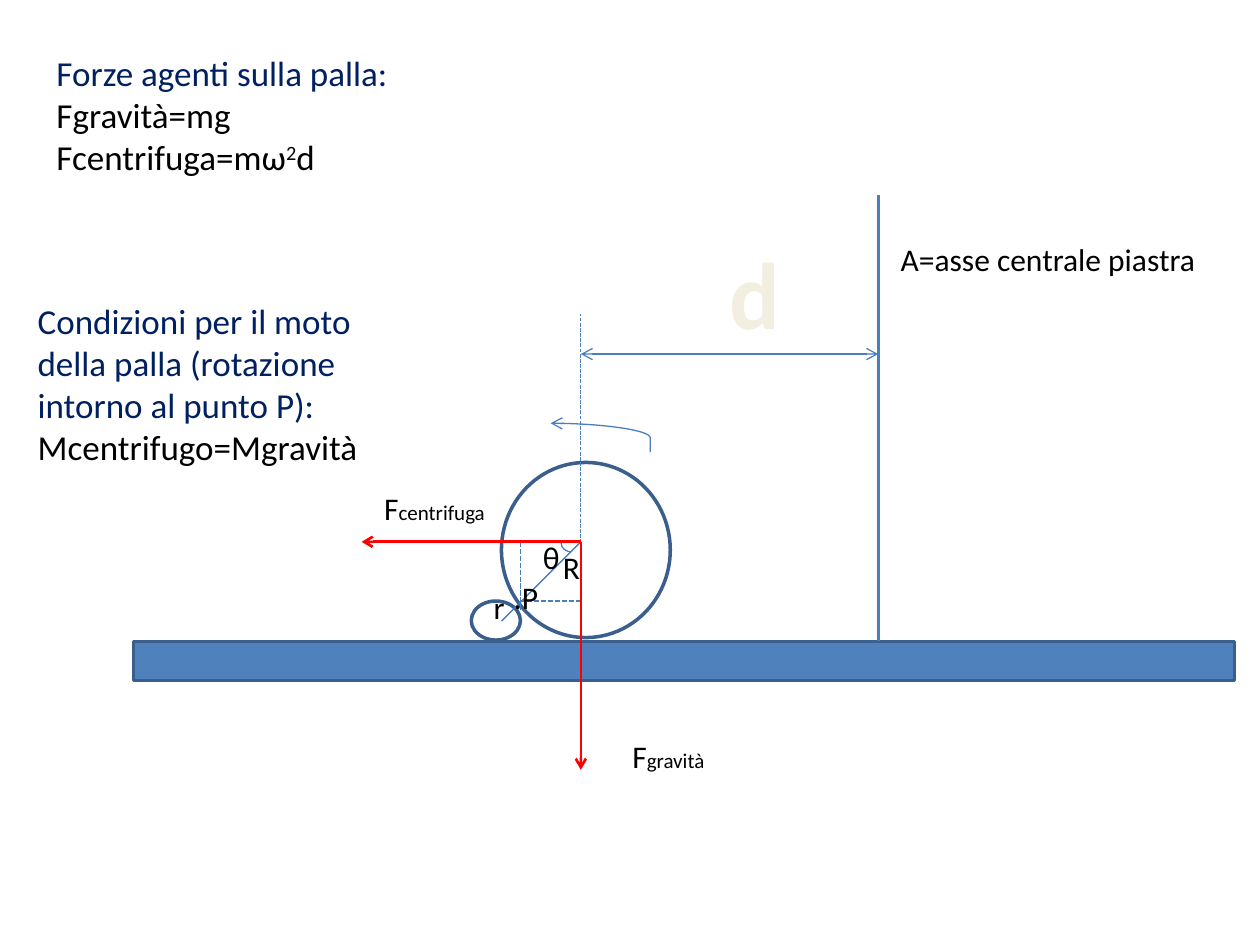
from lxml import etree
from pptx import Presentation
from pptx.dml.color import RGBColor
from pptx.enum.dml import MSO_LINE
from pptx.enum.shapes import MSO_CONNECTOR as LINK, MSO_SHAPE as SHAPE
from pptx.enum.text import MSO_AUTO_SIZE as AUTOSIZE
from pptx.oxml.ns import qn
from pptx.util import Inches, Pt

BLUE = RGBColor(0x4F, 0x81, 0xBD)
OUTLINE = RGBColor(0x3A, 0x5F, 0x8C)
LINE_BLUE = RGBColor(0x4B, 0x7E, 0xBC)
RED = RGBColor(0xFF, 0x00, 0x00)
NAVY = RGBColor(0x00, 0x20, 0x60)
BLACK = RGBColor(0x00, 0x00, 0x00)
CREAM = RGBColor(0xF2, 0xEE, 0xE0)


def add_text(slide, box, paragraphs, size=18, color=BLACK, bold=False, wrap=True):
    """Add a text box; each paragraph is a list of (text, overrides) runs."""
    frame = slide.shapes.add_textbox(*map(Inches, box)).text_frame
    frame.word_wrap = wrap
    frame.auto_size = AUTOSIZE.SHAPE_TO_FIT_TEXT
    for index, runs in enumerate(paragraphs):
        paragraph = frame.add_paragraph() if index else frame.paragraphs[0]
        for text, style in runs:
            run = paragraph.add_run()
            run.text = text
            run.font.name = "Calibri"
            run.font.size = Pt(style.get("size", size))
            run.font.bold = bold
            run.font.color.rgb = style.get("color", color)
            if "baseline" in style:
                run.font._element.set("baseline", str(style["baseline"]))


def add_outline(slide, kind, box, fill=None, color=OUTLINE, width=2):
    """Add a preset shape with an outline and an optional fill."""
    shape = slide.shapes.add_shape(kind, *map(Inches, box))
    shape.shadow.inherit = False
    if fill is None:
        shape.fill.background()
    else:
        shape.fill.solid()
        shape.fill.fore_color.rgb = fill
    shape.line.color.rgb = color
    shape.line.width = Pt(width)
    return shape


def add_line(slide, start, end, color=LINE_BLUE, width=0.75, dashed=False,
             arrows=(), kind=LINK.STRAIGHT):
    """Add a connector; arrows names the ends (headEnd, tailEnd) with arrowheads."""
    line = slide.shapes.add_connector(kind, *map(Inches, (*start, *end)))
    line.line.color.rgb = color
    line.line.width = Pt(width)
    if dashed:
        line.line.dash_style = MSO_LINE.SQUARE_DOT
    outline = line.line._get_or_add_ln()
    for arrow in arrows:
        etree.SubElement(outline, qn(f"a:{arrow}")).set("type", "arrow")
    etree.SubElement(line._element.spPr, qn("a:effectLst"))
    return line


def build_plate(slide, left, top):
    """Draw the plate with its central axis."""
    axis = left + 5.91
    add_outline(slide, SHAPE.RECTANGLE, (left, top, 8.74, 0.31), fill=BLUE)
    add_line(slide, (axis, top), (axis, top - 3.54), width=1.75)
    add_text(slide, (axis + 0.08, top - 3.23, 2.56, 0.4),
             [[("A=asse centrale piastra", {})]], wrap=False)


def build_balls(slide, x, y):
    """Draw the ball centred near (x, y), the small ball and the contact geometry."""
    contact_x, contact_y = x - 0.48, y + 0.47
    add_outline(slide, SHAPE.OVAL, (x - 0.63, y - 0.63, 1.34, 1.39))
    add_outline(slide, SHAPE.OVAL, (x - 0.87, contact_y, 0.39, 0.31))
    add_line(slide, (x, y + 0.79), (x, y - 1.81), dashed=True)
    add_line(slide, (x, contact_y), (contact_x, contact_y), width=1, dashed=True)
    add_line(slide, (contact_x, y), (contact_x, y + 0.55), width=1, dashed=True)
    add_line(slide, (x, y), (x - 0.63, y + 0.63))
    angle = add_outline(slide, SHAPE.ARC, (x - 0.16, y - 0.07, 0.17, 0.15),
                        color=LINE_BLUE, width=0.75)
    angle.rotation = 183.2
    for label, dx, dy, width in (("R", -0.24, 0, 0.24), ("r", -0.79, 0.32, 0.31),
                                 (".P", -0.63, 0.24, 0.47), ("θ", -0.4, -0.08, 0.26)):
        add_text(slide, (x + dx, y + dy, width, 0.4), [[(label, {})]])


def build_motion(slide, x, y):
    """Draw the distance to the axis and the rotation arrow above (x, y)."""
    add_line(slide, (x, y - 1.49), (x + 2.36, y - 1.49), arrows=("headEnd", "tailEnd"))
    add_text(slide, (x + 1.08, y - 2.48, 0.6, 1), [[("d", {})]],
             size=54, color=CREAM, bold=True, wrap=False)
    rotation = add_line(slide, (x + 0.55, y - 0.71), (x - 0.24, y - 0.94),
                        arrows=("tailEnd",), kind=LINK.CURVE)
    guides = rotation._element.spPr.find(qn("a:prstGeom")).get_or_add_avLst()
    guide = etree.SubElement(guides, qn("a:gd"))
    guide.set("name", "adj1")
    guide.set("fmla", "val -100")


def build_forces(slide, x, y):
    """Draw the centrifugal and gravity forces from (x, y)."""
    for end, label, box, wrap in (
            ((x - 1.74, y), "centrifuga", (x - 1.66, y - 0.47, 1.01, 0.4), True),
            ((x, y + 1.81), "gravità", (x + 0.31, y + 1.5, 0.78, 0.4), False)):
        add_line(slide, (x, y), end, color=RED, width=1.5, arrows=("tailEnd",))
        add_text(slide, box, [[("F", {}), (label, {"size": 12})]], wrap=wrap)


def build_notes(slide, box, heading, formulas):
    """Write a navy heading followed by black formulas."""
    add_text(slide, box, [[(heading, {"color": NAVY})], *formulas], size=20)


def main():
    """Build and save the slide."""
    deck = Presentation()
    deck.slide_width, deck.slide_height = Inches(10), Inches(7.5)
    slide = deck.slides.add_slide(deck.slide_layouts[6])
    center = (4.61, 4.3)
    build_plate(slide, 1.06, 5.09)
    build_balls(slide, *center)
    build_motion(slide, *center)
    build_forces(slide, *center)
    build_notes(slide, (0.35, 0.36, 3.14, 1.11), "Forze agenti sulla palla:",
                [[("Fgravità=mg", {})],
                 [("Fcentrifuga=mω", {}), ("2", {"baseline": 30000}), ("d", {})]])
    build_notes(slide, (0.2, 2.33, 2.99, 1.45),
                "Condizioni per il moto della palla (rotazione intorno al punto P):",
                [[("Mcentrifugo=Mgravità", {})]])
    deck.save("out.pptx")


if __name__ == "__main__":
    main()
